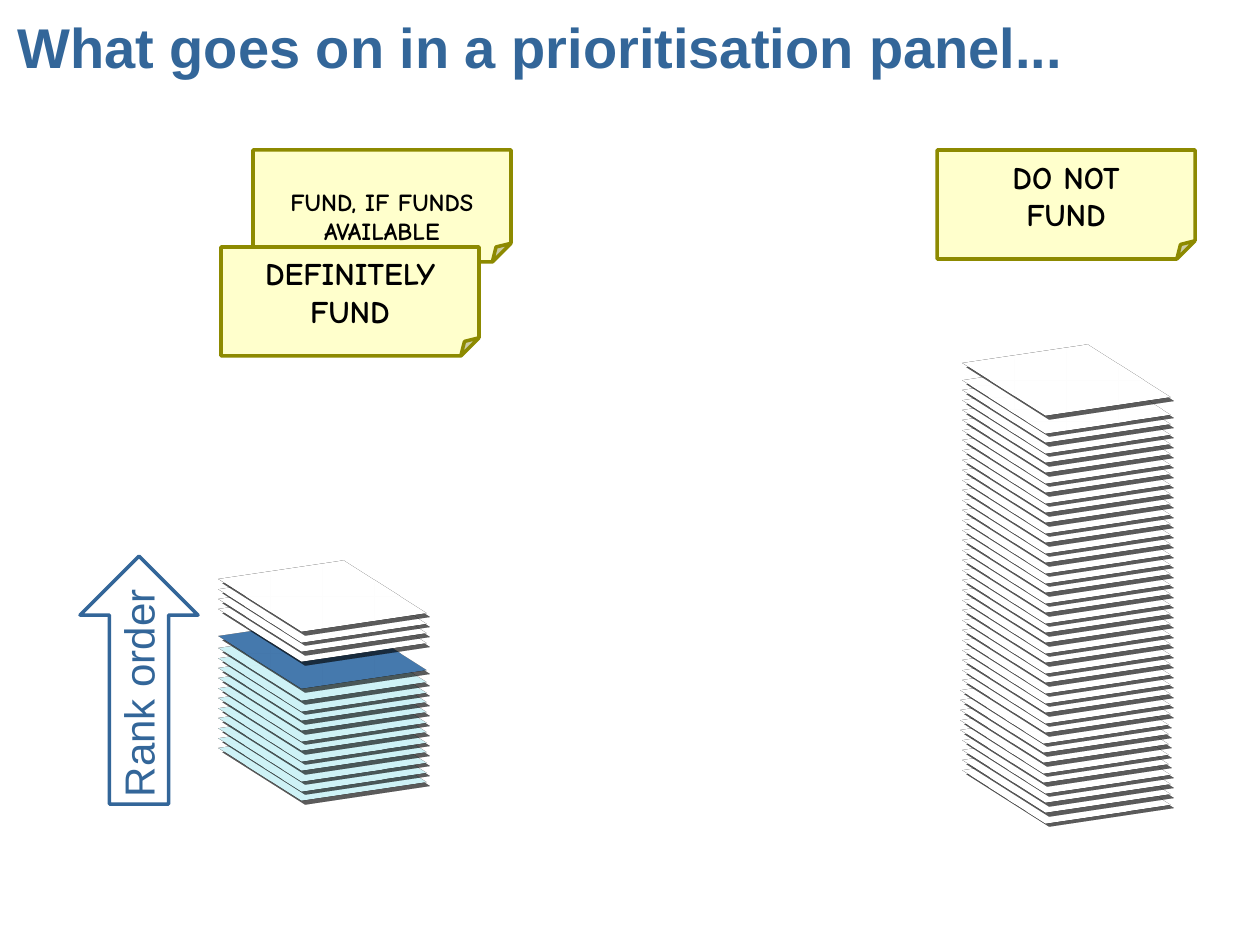
from dataclasses import dataclass

from lxml import etree
from pptx import Presentation
from pptx.dml.color import RGBColor
from pptx.enum.shapes import MSO_SHAPE as SHAPE
from pptx.enum.text import MSO_ANCHOR as ANCHOR, MSO_AUTO_SIZE as AUTO, PP_ALIGN as ALIGN
from pptx.oxml import parse_xml
from pptx.util import Emu, Pt

PX_PER_INCH = 126
NS = "http://schemas.openxmlformats.org/drawingml/2006/main"
BLUE, WHITE, BLACK = "336699", "FFFFFF", "000000"
SHEET_W, SHEET_H, STEP = 139, 189, 10
SHADOW = (
    f'<a:outerShdw xmlns:a="{NS}" blurRad="50800" dist="38100" dir="2700000" algn="tl" '
    'rotWithShape="0"><a:srgbClr val="000000"><a:alpha val="40000"/></a:srgbClr></a:outerShdw>'
)
SCENE = (
    f'<a:scene3d xmlns:a="{NS}"><a:camera prst="isometricOffAxis1Top"/>'
    '<a:lightRig rig="threePt" dir="t"/></a:scene3d>'
)


@dataclass(frozen=True)
class Note:
    x: int
    y: int
    h: int
    lines: tuple[str, ...]
    size: int
    top: int = 6


@dataclass(frozen=True)
class Stack:
    x: int
    bottom: int
    count: int
    fill: str = WHITE
    shifted: range = range(0)


FUND_IF = Note(253, 150, 112, ("FUND, IF FUNDS AVAILABLE",), 14, 45)
FRONT_NOTES = (
    Note(221, 247, 109, ("DEFINITELY FUND",), 18),
    Note(937, 150, 109, ("DO NOT", "FUND"), 18),
)
REJECTED = Stack(997, 693, 40, shifted=range(4, 9))
TOP_REJECTED = Stack(997, 286, 1)
FUNDED = Stack(253, 671, 11, "BADDE1")
CUT_OFF = Stack(253, 559, 1, BLUE)
MAYBE = Stack(253, 532, 4)


def px(n: int) -> Emu:
    """Turn px into EMU."""
    return Emu(round(n * 914400 / PX_PER_INCH))


def rgb(value: str) -> RGBColor:
    """Turn a hex string into a colour."""
    return RGBColor.from_string(value)


def add_shape(shapes, kind, box: tuple, fill: str, line: str):
    """Add a filled preset shape with a 2 pt outline and no shadow."""
    sp = shapes.add_shape(kind, *map(px, box))
    sp.fill.solid()
    sp.fill.fore_color.rgb = rgb(fill)
    sp.line.color.rgb = rgb(line)
    sp.line.width = Pt(2)
    sp.shadow.inherit = False
    return sp


def add_run(p, text: str, color: str, **fmt) -> None:
    """Add a run with the given font attributes."""
    r = p.add_run()
    r.text = text
    r.font.color.rgb = rgb(color)
    for name, value in fmt.items():
        setattr(r.font, name, value)


def add_note(shapes, note: Note) -> None:
    """Draw a yellow note with centred text."""
    box = (note.x, note.y, 258, note.h)
    sp = add_shape(shapes, SHAPE.FOLDED_CORNER, box, "FFFFCC", "8D8A00")
    tf = sp.text_frame
    tf.word_wrap = True
    tf.vertical_anchor = ANCHOR.MIDDLE
    tf.margin_top = px(note.top)
    for i, line in enumerate(note.lines):
        p = tf.add_paragraph() if i else tf.paragraphs[0]
        p.alignment = ALIGN.CENTER
        p.space_before = Pt(0 if i else 6)
        add_run(p, line, BLACK, name="Comic Neue", size=Pt(note.size), bold=True)


def add_stack(shapes, stack: Stack) -> None:
    """Pile up sheets from the bottom, each lying flat with a shadow."""
    for i in range(stack.count):
        x = stack.x - (2 if i in stack.shifted else 0)
        box = (x, stack.bottom - i * STEP, SHEET_W, SHEET_H)
        sp = add_shape(shapes, SHAPE.RECTANGLE, box, stack.fill, BLACK)
        pr = sp._element.spPr
        pr.find(f"{{{NS}}}effectLst").append(parse_xml(SHADOW))
        pr.append(parse_xml(SCENE))
        etree.SubElement(pr, f"{{{NS}}}sp3d")


def add_label(shapes, box: tuple, text: str, wrap: bool, rotation: int = 0, **fmt) -> None:
    """Add a line of blue Arial text."""
    sp = shapes.add_textbox(*map(px, box))
    sp.rotation = rotation
    tf = sp.text_frame
    tf.word_wrap = wrap
    tf.auto_size = AUTO.SHAPE_TO_FIT_TEXT
    add_run(tf.paragraphs[0], text, BLUE, name="Arial", **fmt)


def main() -> None:
    """Build the slide and save it."""
    prs = Presentation()
    prs.slide_width, prs.slide_height = px(1260), px(945)
    s = prs.slides.add_slide(prs.slide_layouts[6])
    shapes = s.shapes

    arrow = add_shape(shapes, SHAPE.RIGHT_ARROW, (15, 621, 248, 118), WHITE, BLUE)
    arrow.rotation = 270
    add_note(shapes, FUND_IF)
    add_label(shapes, (5, 6, 1245, 81), "What goes on in a prioritisation panel...", True,
              size=Pt(32), bold=True)
    add_stack(shapes.add_group_shape().shapes, REJECTED)
    add_label(shapes, (20, 660, 236, 63), "Rank order", False, 270, size=Pt(24))
    add_stack(shapes, TOP_REJECTED)
    for note in FRONT_NOTES:
        add_note(shapes, note)
    for stack in (FUNDED, CUT_OFF):
        add_stack(shapes, stack)
    add_stack(shapes.add_group_shape().shapes, MAYBE)

    prs.save("out.pptx")


if __name__ == "__main__":
    main()
